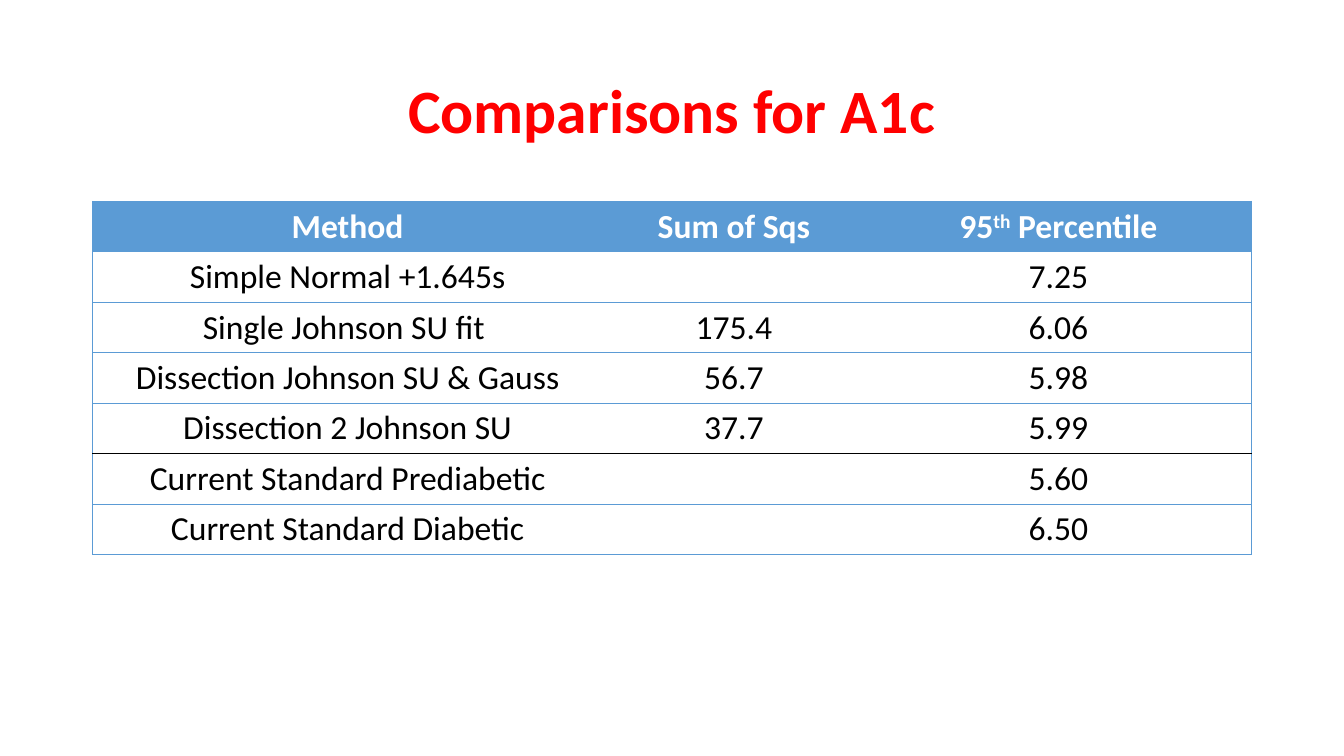
from lxml import etree
from pptx import Presentation
from pptx.dml.color import RGBColor
from pptx.enum.text import MSO_ANCHOR, PP_ALIGN
from pptx.oxml.ns import qn
from pptx.util import Cm, Pt

CENTER = PP_ALIGN.CENTER
MIDDLE = MSO_ANCHOR.MIDDLE

RED = RGBColor(0xFF, 0x00, 0x00)
BLUE = RGBColor(0x5B, 0x9B, 0xD5)
WHITE = RGBColor(0xFF, 0xFF, 0xFF)
BLACK = RGBColor(0x00, 0x00, 0x00)

LEFT, WIDTH = 2.33, 29.21
COL_WIDTHS = (12.86, 6.61, 9.74)
ROW_HEIGHT = 1.27

# Each cell is a list of (text, superscript) runs or a plain string
HEADER = ("Method", "Sum of Sqs",
          [("95", False), ("th", True), (" Percentile", False)])
ROWS = (
    ("Simple Normal +1.645s", "", "7.25"),
    ("Single Johnson SU fit ", "175.4", "6.06"),
    ("Dissection Johnson SU & Gauss", "56.7", "5.98"),
    ("Dissection 2 Johnson SU", "37.7", "5.99"),
    ("Current Standard Prediabetic", "", "5.60"),
    ("Current Standard Diabetic", "", "6.50"),
)
LAST_FITTED_ROW = 4  # a black rule below it sets off the current standards


class SlideBuilder:
    def __init__(self, slide, font):
        self.slide = slide
        self.font = font

    def add_runs(self, p, content, size, color, bold=False):
        p.alignment = CENTER
        runs = [(content, False)] if isinstance(content, str) else content
        for text, superscript in runs:
            if not text:
                continue
            r = p.add_run()
            r.text = text
            r.font.name = self.font
            r.font.size = Pt(size)
            r.font.bold = bold
            r.font.color.rgb = color
            if superscript:
                r._r.get_or_add_rPr().set("baseline", "30000")

    def title(self, text, top, height):
        sp = self.slide.shapes.add_textbox(Cm(LEFT), Cm(top), Cm(WIDTH), Cm(height))
        tf = sp.text_frame
        tf.word_wrap = True
        tf.vertical_anchor = MIDDLE
        p = tf.paragraphs[0]
        p.line_spacing = 0.9
        self.add_runs(p, text, 44, RED, bold=True)

    def borders(self, cell, lines):
        """Set the four sides; a side of None has no line."""
        tcPr = cell._tc.get_or_add_tcPr()
        for i, side in enumerate(("lnL", "lnR", "lnT", "lnB")):
            ln = etree.Element(qn("a:" + side))
            if lines[i]:
                color, width = lines[i]
                ln.set("w", str(Pt(width)))
                fill = etree.SubElement(ln, qn("a:solidFill"))
                etree.SubElement(fill, qn("a:srgbClr"), val=str(color))
            else:
                etree.SubElement(ln, qn("a:noFill"))
            tcPr.insert(i, ln)

    def table(self, rows, top):
        n_rows, n_cols = len(rows), len(COL_WIDTHS)
        table = self.slide.shapes.add_table(
            n_rows, n_cols, Cm(LEFT), Cm(top), Cm(WIDTH), Cm(ROW_HEIGHT * n_rows)).table
        table.horz_banding = False
        for column, width in zip(table.columns, COL_WIDTHS):
            column.width = Cm(width)
        thin, rule = (BLUE, 0.5), (BLACK, 1)
        for i, row in enumerate(rows):
            is_header = i == 0
            for j, content in enumerate(row):
                cell = table.cell(i, j)
                if is_header:
                    cell.fill.solid()
                    cell.fill.fore_color.rgb = BLUE
                else:
                    cell.fill.background()
                self.borders(cell, (
                    thin if j == 0 else None,
                    thin if j == n_cols - 1 else None,
                    rule if i == LAST_FITTED_ROW + 1 else thin,
                    rule if i == LAST_FITTED_ROW else thin))
                self.add_runs(cell.text_frame.paragraphs[0], content, 24,
                              WHITE if is_header else BLACK, bold=is_header)


def main():
    prs = Presentation()
    prs.slide_width, prs.slide_height = Cm(33.87), Cm(19.05)
    s = prs.slides.add_slide(prs.slide_layouts[6])
    builder = SlideBuilder(s, "Calibri")

    # Title
    builder.title("Comparisons for A1c", 1.01, 3.68)

    # Comparison table
    builder.table((HEADER,) + ROWS, 5.07)

    prs.save("out.pptx")


if __name__ == "__main__":
    main()
